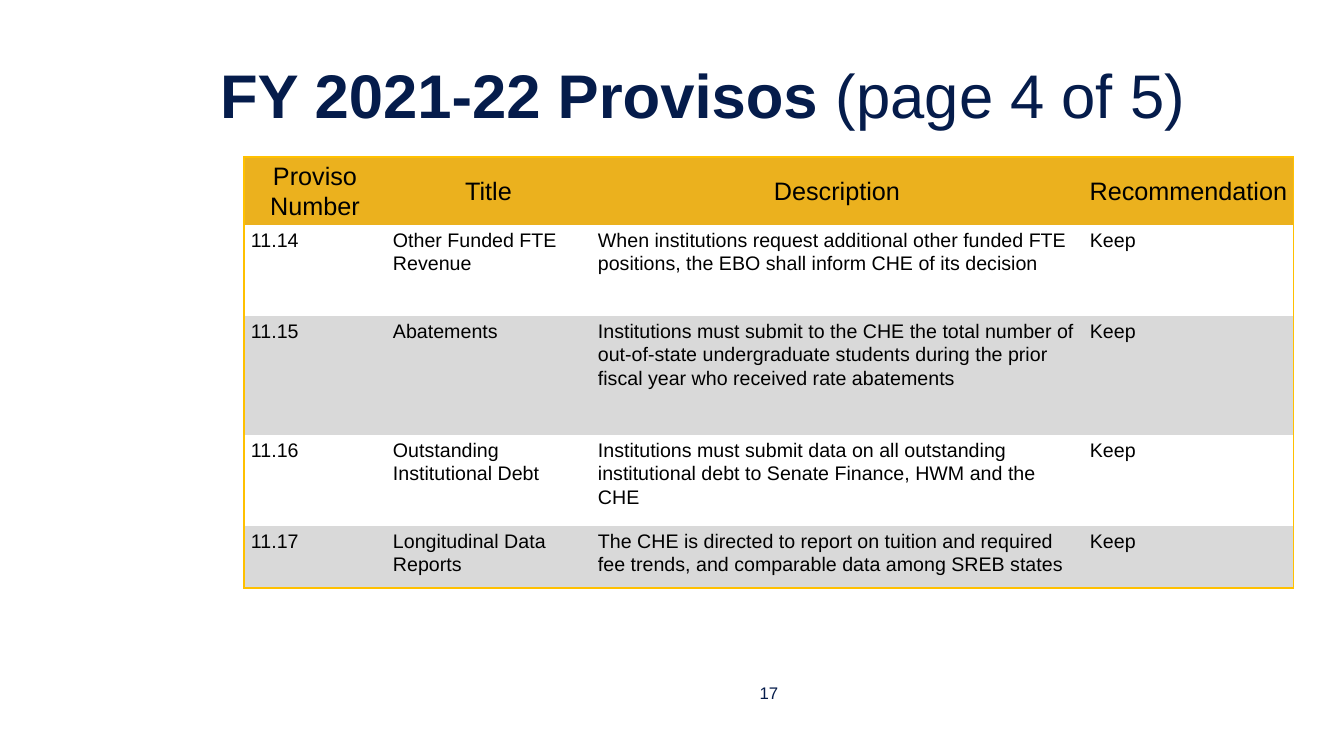
from pptx import Presentation
from pptx.dml.color import RGBColor
from pptx.enum.text import MSO_ANCHOR as Anchor, PP_ALIGN as Align
from pptx.oxml.ns import qn
from pptx.util import Pt
from lxml.etree import SubElement

NAVY, BLACK, GOLD, BORDER = "051C4B", "000000", "EBB11E", "FFC000"
BAND_FILLS = ["FFFFFF", "D9D9D9"]
TITLE = [("FY 2021-22 Provisos ", True), ("(page 4 of 5)", False)]
PAGE_NUMBER = "17"
PROVISOS = [
    ("Proviso Number", "Title", "Description", "Recommendation"),
    ("11.14", "Other Funded FTE Revenue",
     "When institutions request additional other funded FTE positions, "
     "the EBO shall inform CHE of its decision", "Keep"),
    ("11.15", "Abatements",
     "Institutions must submit to the CHE the total number of out-of-state "
     "undergraduate students during the prior fiscal year who received rate abatements", "Keep"),
    ("11.16", "Outstanding Institutional Debt",
     "Institutions must submit data on all outstanding institutional debt "
     "to Senate Finance, HWM and the CHE", "Keep"),
    ("11.17", "Longitudinal Data Reports",
     "The CHE is directed to report on tuition and required fee trends, "
     "and comparable data among SREB states", "Keep"),
]
COLUMN_WIDTHS = [142, 205, 492, 211]
ROW_HEIGHTS = [68, 91, 119, 91, 62]


def px(length):
    return round(length * 914400 / 100.8)


def color(value):
    return RGBColor.from_string(value)


def write(frame, runs, size, ink=NAVY, align=Align.LEFT, spacing=None):
    frame.word_wrap = True
    paragraph = frame.paragraphs[0]
    paragraph.alignment = align
    if spacing:
        paragraph.line_spacing = spacing
    for text, bold in runs:
        run = paragraph.add_run()
        run.text = text
        run.font.name = "Arial"
        run.font.size = Pt(size)
        run.font.bold = bold
        run.font.color.rgb = color(ink)


def set_borders(cell, edges):
    properties = cell._tc.get_or_add_tcPr()
    for side, visible in edges.items():
        line = SubElement(properties, qn(f"a:ln{side}"), w=str(Pt(1)))
        if visible:
            fill = SubElement(line, qn("a:solidFill"))
            SubElement(fill, qn("a:srgbClr"), val=BORDER)
        else:
            SubElement(line, qn("a:noFill"))


def add_title(slide):
    title = slide.shapes.title
    title.left, title.top, title.width, title.height = map(px, (210, 31, 1119, 126))
    title.text_frame.vertical_anchor = Anchor.MIDDLE
    write(title.text_frame, TITLE, 44)


def add_provisos(slide):
    last_row, last_column = len(ROW_HEIGHTS) - 1, len(COLUMN_WIDTHS) - 1
    table = slide.shapes.add_table(
        len(ROW_HEIGHTS), len(COLUMN_WIDTHS), px(244), px(157),
        px(sum(COLUMN_WIDTHS)), px(sum(ROW_HEIGHTS))).table
    table.first_row = table.horz_banding = False
    for column, width in zip(table.columns, COLUMN_WIDTHS):
        column.width = px(width)
    for r, (values, height) in enumerate(zip(PROVISOS, ROW_HEIGHTS)):
        table.rows[r].height = px(height)
        header = r == 0
        for c, text in enumerate(values):
            cell = table.cell(r, c)
            set_borders(cell, {"L": c == 0, "R": c == last_column,
                               "T": header, "B": r == last_row})
            cell.fill.solid()
            cell.fill.fore_color.rgb = color(GOLD if header else BAND_FILLS[(r - 1) % 2])
            cell.margin_left = cell.margin_right = px(5 if header else 7)
            cell.margin_top = cell.margin_bottom = px(3)
            cell.vertical_anchor = Anchor.MIDDLE if header else Anchor.TOP
            write(cell.text_frame, [(text, False)], 18 if header else 14, BLACK,
                  Align.CENTER if header else Align.LEFT, 1.07)


def add_page_number(slide):
    box = slide.shapes.add_textbox(*map(px, (735, 673, 68, 40)))
    box.text_frame.vertical_anchor = Anchor.MIDDLE
    write(box.text_frame, [(PAGE_NUMBER, False)], 12, align=Align.CENTER)


def main():
    presentation = Presentation()
    presentation.slide_width, presentation.slide_height = px(1344), px(756)
    slide = presentation.slides.add_slide(presentation.slide_layouts[5])
    add_title(slide)
    add_provisos(slide)
    add_page_number(slide)
    presentation.save("out.pptx")


if __name__ == "__main__":
    main()
